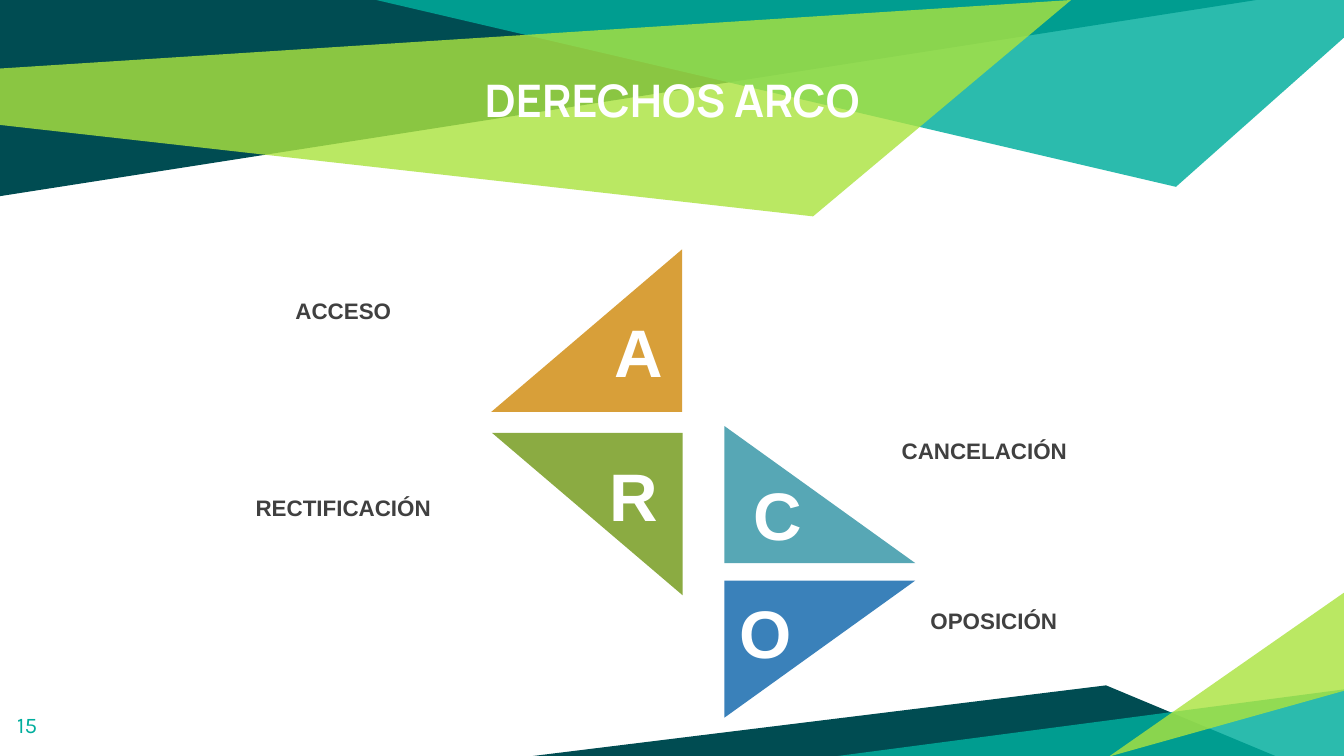
"""Build the ARCO rights slide: four lettered triangles between angular bands."""
from lxml import etree
from pptx import Presentation
from pptx import util as u
from pptx.dml.color import RGBColor
from pptx.enum import shapes, text
from pptx.oxml.ns import qn

CELL = u.Inches(0.01)
COLUMNS, ROWS = 1000, 563
DARK = RGBColor(0x00, 0x4C, 0x52)
TEAL = RGBColor(0x00, 0xAE, 0x9D)
LIME = RGBColor(0xAB, 0xE3, 0x3F)
AMBER = RGBColor(0xD8, 0x9F, 0x39)
GREEN = RGBColor(0x8B, 0xAB, 0x42)
AQUA = RGBColor(0x57, 0xA7, 0xB5)
BLUE = RGBColor(0x3A, 0x81, 0xBA)
GREY = RGBColor(0x40, 0x40, 0x40)
WHITE = RGBColor(0xFF, 0xFF, 0xFF)


def paint(shape, color, opacity=100):
    shape.shadow.inherit = False
    shape.line.fill.background()
    shape.fill.solid()
    shape.fill.fore_color.rgb = color
    if opacity < 100:
        tint = shape._element.spPr.find(".//" + qn("a:srgbClr"))
        etree.SubElement(tint, qn("a:alpha")).set("val", str(opacity * 1000))


def write(box, words, size, font, color, bold=True, align=text.PP_ALIGN.CENTER):
    box.text_frame.word_wrap = True
    para = box.text_frame.paragraphs[0]
    para.alignment = align
    span = para.add_run()
    span.text = words
    span.font.size = u.Pt(size)
    span.font.name = font
    span.font.bold = bold
    span.font.color.rgb = color


deck = Presentation()
deck.slide_width = COLUMNS * CELL
deck.slide_height = deck.slide_width * 9 // 16
page = deck.slides.add_slide(deck.slide_layouts[5])

bands = [
    (DARK, 100, [(0, 0), (0, 146), (935, 0)]),
    (TEAL, 83, [(280, 0), (875, 139), (COLUMNS, 28), (COLUMNS, 0)]),
    (LIME, 81, [(0, 51), (0, 93), (605, 161), (797, 0)]),
    (DARK, 100, [(393, ROWS), (950, ROWS), (823, 510)]),
    (TEAL, 83, [(COLUMNS, 513), (COLUMNS, ROWS), (620, ROWS)]),
    (LIME, 81, [(COLUMNS, 514), (COLUMNS, 441), (825, ROWS)]),
]
for color, opacity, points in bands:
    outline = page.shapes.build_freeform(*points[0], scale=CELL)
    outline.add_line_segments(points[1:], close=True)
    paint(outline.convert_to_shape(), color, opacity)

title = page.shapes.title
title.left, title.top, title.width, title.height = [n * CELL for n in (97, 44, 806, 94)]
page.shapes._spTree.append(title._element)
number = page.shapes.add_textbox(3 * CELL, 519 * CELL, 60 * CELL, 43 * CELL)
for box in (title, number):
    frame = box.text_frame
    frame.auto_size = text.MSO_AUTO_SIZE.NONE
    frame.vertical_anchor = text.MSO_ANCHOR.TOP
    frame.margin_left = frame.margin_right = 10 * CELL
    frame.margin_top = frame.margin_bottom = 10 * CELL
write(title, "DERECHOS ARCO", 24, "Manrope", WHITE)
write(number, "15", 12, "Karla", TEAL, False, text.PP_ALIGN.LEFT)

triangles = [
    (GREEN, 180, 366, 322, 142, 121),
    (AMBER, 270, 376, 175, 121, 142),
    (AQUA, 0, 539, 317, 142, 102),
    (BLUE, 90, 559, 412, 102, 142),
]
for color, turn, *place in triangles:
    triangle = page.shapes.add_shape(
        shapes.MSO_SHAPE.RIGHT_TRIANGLE, *[n * CELL for n in place])
    triangle.rotation = turn
    paint(triangle, color)

label_style = (283, 30, 12, GREY)
letter_style = (61, 71, 36, WHITE)
captions = [
    ("ACCESO", 114, 216, label_style),
    ("RECTIFICACIÓN", 114, 363, label_style),
    ("CANCELACIÓN", 591, 320, label_style),
    ("OPOSICIÓN", 598, 447, label_style),
    ("A", 445, 226, letter_style),
    ("R", 441, 333, letter_style),
    ("C", 548, 347, letter_style),
    ("O", 539, 435, letter_style),
]
for words, column, row, (width, height, size, color) in captions:
    box = page.shapes.add_textbox(column * CELL, row * CELL, width * CELL, height * CELL)
    box.text_frame.auto_size = text.MSO_AUTO_SIZE.SHAPE_TO_FIT_TEXT
    write(box, words, size, "Arial", color)

deck.save("out.pptx")
